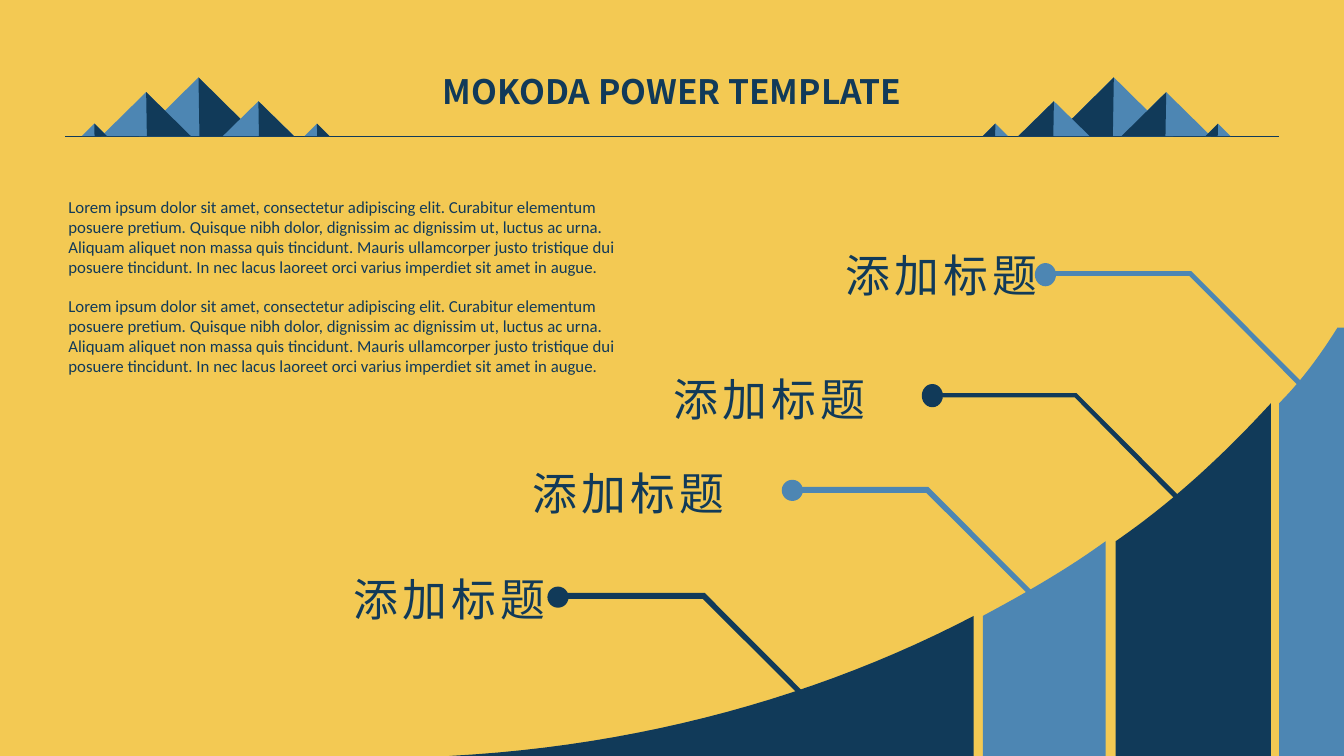
"""Build a slide with a rising curve of columns and four labelled leaders."""
from lxml import etree
from pptx import Presentation
from pptx.dml.color import RGBColor
from pptx.enum.shapes import MSO_CONNECTOR, MSO_SHAPE
from pptx.enum.text import MSO_AUTO_SIZE, PP_ALIGN
from pptx.oxml.ns import qn
from pptx.util import Pt

STRAIGHT = MSO_CONNECTOR.STRAIGHT
TRIANGLE, OVAL = MSO_SHAPE.ISOSCELES_TRIANGLE, MSO_SHAPE.OVAL
GROW, FIXED = MSO_AUTO_SIZE.SHAPE_TO_FIT_TEXT, MSO_AUTO_SIZE.NONE
LEFT, CENTER = PP_ALIGN.LEFT, PP_ALIGN.CENTER

NAVY = RGBColor(0x11, 0x3A, 0x59)
BLUE = RGBColor(0x4D, 0x86, 0xB3)
GOLD = RGBColor(0xF3, 0xC9, 0x53)

SANS, BODY = "Noto Sans CJK SC", "Calibri"
WIDTH, HEIGHT = 960, 540
BASE = 97.3
MIRROR = 937.4
STEPS = 24

# Middle, half width and height of each peak in the right range
PEAKS = [
    (795.6, 42.5, 42),
    (752.8, 25.5, 25),
    (833, 32, 31.5),
    (711, 9, 9),
    (870, 9, 9),
]
# Four Bezier points of the top edge, right side, colour
COLUMNS = [
    ((695.5, 440), (586.8, 496.8), (458.6, 532.8), (321, 540), 695.5, NAVY),
    ((789.8, 386.6), (763.2, 406), (733, 423.4), (702, 440), 789.8, BLUE),
    ((955.4, 234), (943.2, 253.4), (930.2, 271.4), (913.7, 288), 960, BLUE),
    ((907.9, 288), (874.8, 324), (838.8, 357.8), (797, 386.6), 907.9, NAVY),
]
# Left, top and thickness of the line; left, top and height of the dot;
# left and top of the label; colour
LEADERS = [
    (398.9, 423.4, 4.3, 391, 419, 15.1, 245.5, 404.6, NAVY),
    (558.7, 347.8, 4.3, 558.4, 342.7, 15.1, 373, 329, BLUE),
    (664.6, 280.8, 3, 658.4, 274.3, 16.6, 473.8, 262.1, NAVY),
    (746.6, 193.7, 3.4, 739.2, 187.9, 16.6, 596.9, 173.5, BLUE),
]
LOREM = (
    "Lorem ipsum dolor sit amet, consectetur adipiscing elit. Curabitur "
    "elementum posuere pretium. Quisque nibh dolor, dignissim ac dignissim "
    "ut, luctus ac urna. Aliquam aliquet non massa quis tincidunt. Mauris "
    "ullamcorper justo tristique dui posuere tincidunt. In nec lacus laoreet "
    "orci varius imperdiet sit amet in augue."
)


def paint(shape, color):
    """Give a shape a flat fill without line or shadow."""
    shape.shadow.inherit = False
    shape.fill.solid()
    shape.fill.fore_color.rgb = color
    shape.line.fill.background()


def add_form(slide, kind, box, color):
    """Add a flat preset shape."""
    paint(slide.shapes.add_shape(kind, *map(Pt, box)), color)


def add_poly(slide, points, color):
    """Add a flat closed outline."""
    first, *rest = [(Pt(x), Pt(y)) for x, y in points]
    pen = slide.shapes.build_freeform(*first)
    pen.add_line_segments(rest)
    paint(pen.convert_to_shape(), color)


def add_text(slide, box, text, font, size, bold=False, wrap=False,
             align=LEFT, gap=0, inset=(7.2, 3.6)):
    """Add a text box with one run."""
    frame = slide.shapes.add_textbox(*map(Pt, box)).text_frame
    frame.word_wrap = wrap
    frame.auto_size = FIXED if wrap else GROW
    frame.margin_left = frame.margin_right = Pt(inset[0])
    frame.margin_top = frame.margin_bottom = Pt(inset[1])
    para = frame.paragraphs[0]
    para.alignment = align
    run = para.add_run()
    run.text = text
    run.font.name, run.font.size, run.font.bold = font, Pt(size), bold
    run.font.color.rgb = NAVY
    props = run.font._element
    latin = props.find(qn("a:latin"))
    east = etree.Element(qn("a:ea"), typeface=font)
    latin.addnext(east)
    if gap:
        props.set("spc", str(gap * 100))


def add_rule(slide):
    """Draw the thin line below the title."""
    rule = slide.shapes.add_connector(
        STRAIGHT, Pt(46.6), Pt(BASE), Pt(913.7), Pt(BASE))
    rule.line.color.rgb = NAVY
    rule.line.width = Pt(0.5)
    etree.SubElement(rule._element.spPr, qn("a:effectLst"))


def add_range(slide, side):
    """Draw peaks shaded on the left (-1) or, mirrored, on the right (1)."""
    for mid, half, high in PEAKS:
        x = mid if side < 0 else MIRROR - mid
        top = BASE - high
        add_form(slide, TRIANGLE, (x - half, top, 2 * half, high), BLUE)
        foot = x + side * high / 60
        shade = [(x, top), (foot, BASE), (x + side * half, BASE)]
        add_poly(slide, shade, NAVY)


def bend(a, b, c, d):
    """Return points along a cubic Bezier curve."""
    points = []
    for step in range(STEPS + 1):
        t = step / STEPS
        u = 1 - t
        shares = (u ** 3, 3 * u * u * t, 3 * u * t * t, t ** 3)
        points.append(tuple(
            sum(s * v for s, v in zip(shares, axis))
            for axis in zip(a, b, c, d)))
    return points


def add_column(slide, a, b, c, d, right, color):
    """Draw a column below a curved top edge."""
    feet = [(d[0], HEIGHT), (right, HEIGHT), (right, a[1])]
    add_poly(slide, bend(a, b, c, d) + feet, color)


def add_leader(slide, x, y, thick, dot_x, dot_y, dot_h, text_x, text_y, color):
    """Draw a bent leader with its dot and label."""
    band = [(0, 0), (104.4, 0), (183.6, 79.5), (181, 82),
            (103, thick), (0, thick)]
    add_poly(slide, [(x + dx, y + dy) for dx, dy in band], color)
    add_form(slide, OVAL, (dot_x, dot_y, 15.1, dot_h), color)
    add_text(slide, (text_x, text_y, 155.5, 46), "添加标题", SANS, 32, gap=3)


def main():
    """Build and save the slide."""
    deck = Presentation()
    deck.slide_width, deck.slide_height = Pt(WIDTH), Pt(HEIGHT)
    slide = deck.slides.add_slide(deck.slide_layouts[6])
    slide.background.fill.solid()
    slide.background.fill.fore_color.rgb = GOLD
    add_text(slide, (293, 47.5, 373.7, 34.6), "MOKODA POWER TEMPLATE",
             SANS, 24, bold=True, align=CENTER, inset=(5.8, 2.9))
    add_rule(slide)
    for side in (-1, 1):
        add_range(slide, side)
    for column in COLUMNS:
        add_column(slide, *column)
    for leader in LEADERS:
        add_leader(slide, *leader)
    for top in (136.8, 207.6):
        add_text(slide, (41.8, top, 422.6, 96.5), LOREM, BODY, 12, wrap=True)
    deck.save("out.pptx")


if __name__ == "__main__":
    main()
